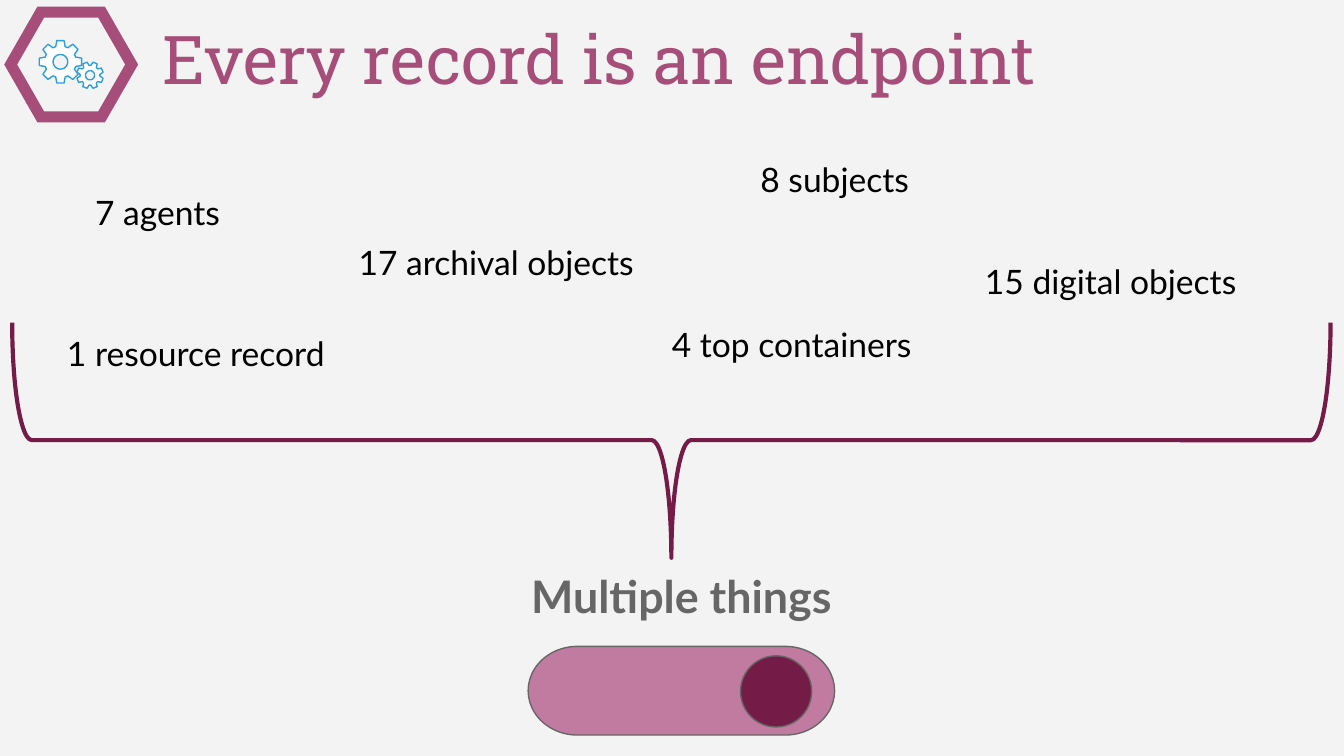
import math

import lxml.etree
import pptx
import pptx.dml.color
import pptx.enum.shapes
import pptx.enum.text
import pptx.oxml.ns
import pptx.util

Inches = pptx.util.Inches
Shape = pptx.enum.shapes.MSO_SHAPE
Align = pptx.enum.text.PP_ALIGN
Anchor = pptx.enum.text.MSO_ANCHOR

PLUM = "741B47"
ROSE = "A64D79"
GREY = "666666"


def rgb(value):
    """Turn a hex string into a colour."""
    return pptx.dml.color.RGBColor.from_string(value)


def paint(shape, fill, line, weight):
    """Give a shape its fill and outline, without a shadow."""
    shape.shadow.inherit = False
    if fill:
        shape.fill.solid()
        shape.fill.fore_color.rgb = rgb(fill)
    else:
        shape.fill.background()
    shape.line.color.rgb = rgb(line)
    shape.line.width = pptx.util.Pt(weight)


def add_preset(slide, preset, box, fill, line, weight):
    """Add a painted preset shape in a box of inches."""
    shape = slide.shapes.add_shape(preset, *map(Inches, box))
    paint(shape, fill, line, weight)
    return shape


def write(shape, text, size, font, colour, bold=False, align=Align.LEFT, anchor=Anchor.TOP):
    """Write one formatted paragraph into a shape."""
    frame = shape.text_frame
    frame.text = text
    frame.word_wrap = True
    frame.auto_size = pptx.enum.text.MSO_AUTO_SIZE.NONE
    frame.vertical_anchor = anchor
    frame.margin_left = frame.margin_right = Inches(0.1)
    frame.margin_top = frame.margin_bottom = Inches(0.1)
    paragraph = frame.paragraphs[0]
    paragraph.alignment = align
    paragraph.font.size = pptx.util.Pt(size)
    paragraph.font.name = font
    paragraph.font.bold = bold
    paragraph.font.color.rgb = rgb(colour)


def add_label(slide, box, text, size=18, colour="000000", **style):
    """Add a Lato text box."""
    label = slide.shapes.add_textbox(*map(Inches, box))
    write(label, text, size, "Lato", colour, **style)


def add_gear(shapes, x, y, radius, turn, teeth=8):
    """Draw a toothed wheel with a round hole about a centre."""
    def point(distance, angle):
        return (Inches(x + distance * math.cos(angle)), Inches(y + distance * math.sin(angle)))

    profile = [(0.74, -0.3), (1, -0.17), (1, 0.17), (0.74, 0.3)]
    rim = [
        point(radius * reach, turn + math.tau * tooth / teeth + offset)
        for tooth in range(teeth)
        for reach, offset in profile
    ]
    hole = [point(radius * 0.34, -math.tau * step / 32) for step in range(32)]
    builder = shapes.build_freeform(*rim[0])
    builder.add_line_segments(rim[1:])
    builder.move_to(*hole[0])
    builder.add_line_segments(hole[1:])
    paint(builder.convert_to_shape(), "FFFFFF", "2C9DDE", 0.75)


def add_badge(slide, left, top, width, height):
    """Draw the sharp-cornered hexagon badge with its two gears."""
    hexagon = add_preset(slide, Shape.HEXAGON, (left, top, width, height), None, ROSE, 6)
    hexagon.adjustments[0] = 0.287
    outline = hexagon.line.fill._xPr
    lxml.etree.SubElement(outline, pptx.oxml.ns.qn("a:miter"), lim="800000")
    gears = slide.shapes.add_group_shape().shapes
    add_gear(gears, left + 0.37, top + 0.37, 0.16, 0)
    add_gear(gears, left + 0.59, top + 0.47, 0.1, math.pi / 8)


def add_title(slide, left, top, width, height):
    """Place and format the slide title."""
    title = slide.shapes.title
    title.left, title.top, title.width, title.height = map(Inches, (left, top, width, height))
    write(title, "Every record is an endpoint", 36, "Roboto Slab", ROSE, anchor=Anchor.BOTTOM)


def add_records(slide, left, top):
    """Scatter the record counts over the upper area."""
    records = [
        ("17 archival objects", 2.17, 0.62, 2.72, 0.71),
        ("4 top containers", 4.5, 1.23, 2.28, 1.07),
        ("15 digital objects", 6.83, 0.76, 2.28, 1.75),
        ("1 resource record", 0, 1.3, 2.42, 0.66),
        ("8 subjects", 5.16, 0, 1.46, 0.66),
        ("7 agents", 0.21, 0.25, 1.46, 0.66),
    ]
    for text, across, down, width, height in records:
        add_label(slide, (left + across, top + down, width, height), text)


def add_brace(slide, left, top, width, height):
    """Draw a brace that opens upward and fills the box."""
    upright = (left + (width - height) / 2, top + (height - width) / 2, height, width)
    brace = add_preset(slide, Shape.RIGHT_BRACE, upright, None, PLUM, 2.25)
    brace.rotation = 90


def add_switch(slide, left, top, width, height):
    """Draw the captioned toggle, switched to the right."""
    add_label(slide, (left, top, width, 0.66), "Multiple things", 24, GREY,
              bold=True, align=Align.CENTER)
    track_top = top + height - 0.66
    add_preset(slide, Shape.FLOWCHART_TERMINATOR, (left + 0.22, track_top, 2.28, 0.66),
               "C27BA0", GREY, 0.75)
    add_preset(slide, Shape.OVAL, (left + 1.8, track_top + 0.07, 0.53, 0.53), PLUM, GREY, 0.75)


def main():
    """Build and save the slide."""
    deck = pptx.Presentation()
    deck.slide_width = Inches(10)
    deck.slide_height = deck.slide_width * 9 // 16
    slide = deck.slides.add_slide(deck.slide_layouts[5])
    slide.background.fill.solid()
    slide.background.fill.fore_color.rgb = rgb("F3F3F3")
    add_badge(slide, 0.08, 0.09, 0.9, 0.78)
    add_title(slide, 1.11, 0.12, 8.42, 0.71)
    add_brace(slide, 0.09, 2.4, 9.81, 1.75)
    add_switch(slide, 3.71, 4.13, 2.72, 1.34)
    add_records(slide, 0.4, 1.08)
    deck.save("out.pptx")


if __name__ == "__main__":
    main()
